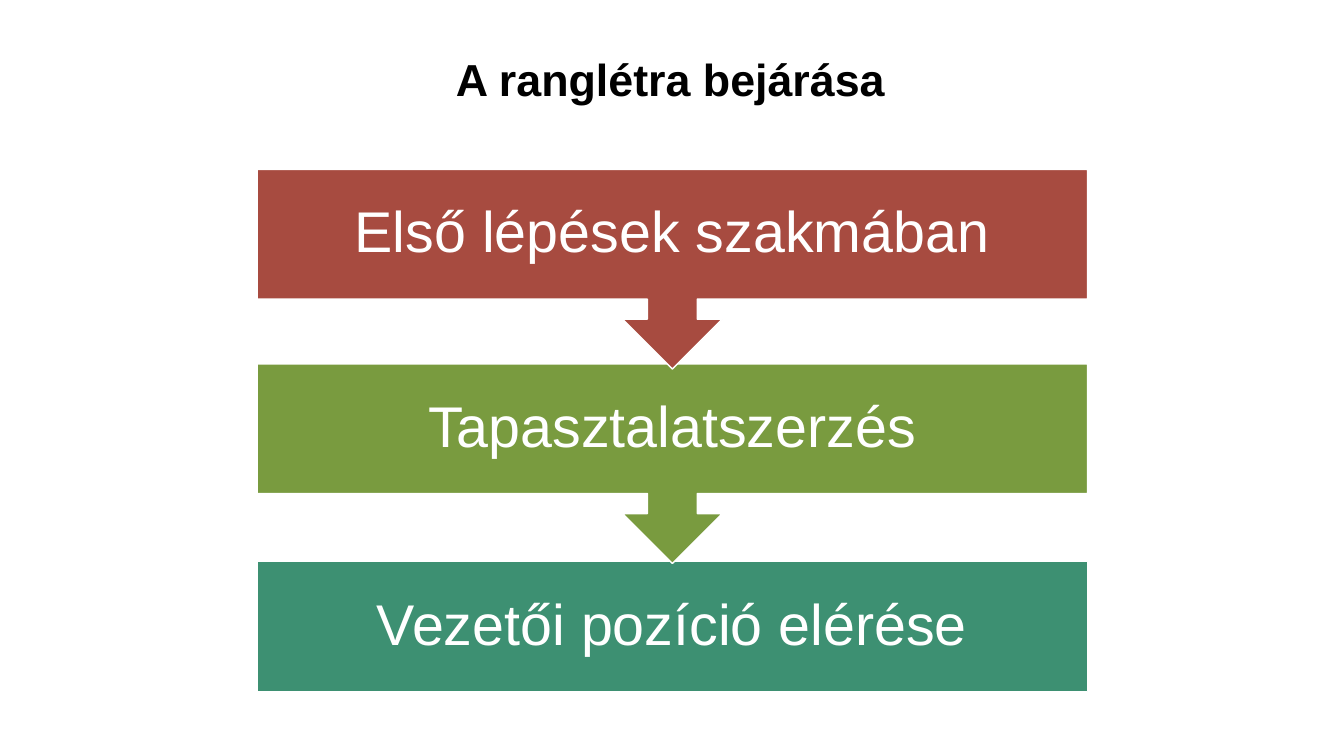
import pptx
import pptx.dml.color
import pptx.enum.shapes
import pptx.enum.text
import pptx.util

Cm = pptx.util.Cm
Pt = pptx.util.Pt
RGBColor = pptx.dml.color.RGBColor
Kind = pptx.enum.shapes.MSO_SHAPE
Anchor = pptx.enum.text.MSO_ANCHOR

BLACK = RGBColor(0x00, 0x00, 0x00)
WHITE = RGBColor(0xFF, 0xFF, 0xFF)
RED = RGBColor(0xA7, 0x4B, 0x40)
GREEN = RGBColor(0x79, 0x9B, 0x3F)
TEAL = RGBColor(0x3D, 0x90, 0x72)

LEFT, WIDTH = Cm(6.48), Cm(20.93)
BOX, CALLOUT = Cm(3.28), Cm(5.03)

# Lowest step first, so that each arrow tip lies over the box below it
STEPS = [
    ("Vezetői pozíció elérése", Cm(14.15), BOX, Kind.RECTANGLE, TEAL),
    ("Tapasztalatszerzés", Cm(9.17), CALLOUT, Kind.DOWN_ARROW_CALLOUT, GREEN),
    ("Első lépések szakmában", Cm(4.27), CALLOUT, Kind.DOWN_ARROW_CALLOUT, RED),
]


def write(frame, text, size, color, bold=False):
    frame.word_wrap = True
    line = frame.paragraphs[0]
    line.text = text
    line.alignment = pptx.enum.text.PP_ALIGN.CENTER
    line.line_spacing = 0.9
    font = line.font
    font.name = "Arial"
    font.size = Pt(size)
    font.bold = bold
    font.color.rgb = color


def add_title(slide, text):
    box = slide.shapes.add_textbox(Cm(10.03), Cm(1.32), Cm(13.74), Cm(2.39))
    write(box.text_frame, text, 32, BLACK, bold=True)


def add_step(slide, text, top, height, kind, color):
    step = slide.shapes.add_shape(kind, LEFT, top, WIDTH, height)
    step.shadow.inherit = False
    step.fill.solid()
    step.fill.fore_color.rgb = color
    step.line.color.rgb = WHITE
    step.line.width = Pt(1)
    frame = step.text_frame
    frame.vertical_anchor = Anchor.MIDDLE
    frame.margin_left = frame.margin_right = Cm(0.81)
    frame.margin_top = frame.margin_bottom = Cm(0.81)
    write(frame, text, 41, WHITE)


def main():
    deck = pptx.Presentation()
    deck.slide_width, deck.slide_height = Cm(33.87), Cm(19.05)
    slide = deck.slides.add_slide(deck.slide_layouts[6])
    add_title(slide, "A ranglétra bejárása")
    for step in STEPS:
        add_step(slide, *step)
    deck.save("out.pptx")


if __name__ == "__main__":
    main()
